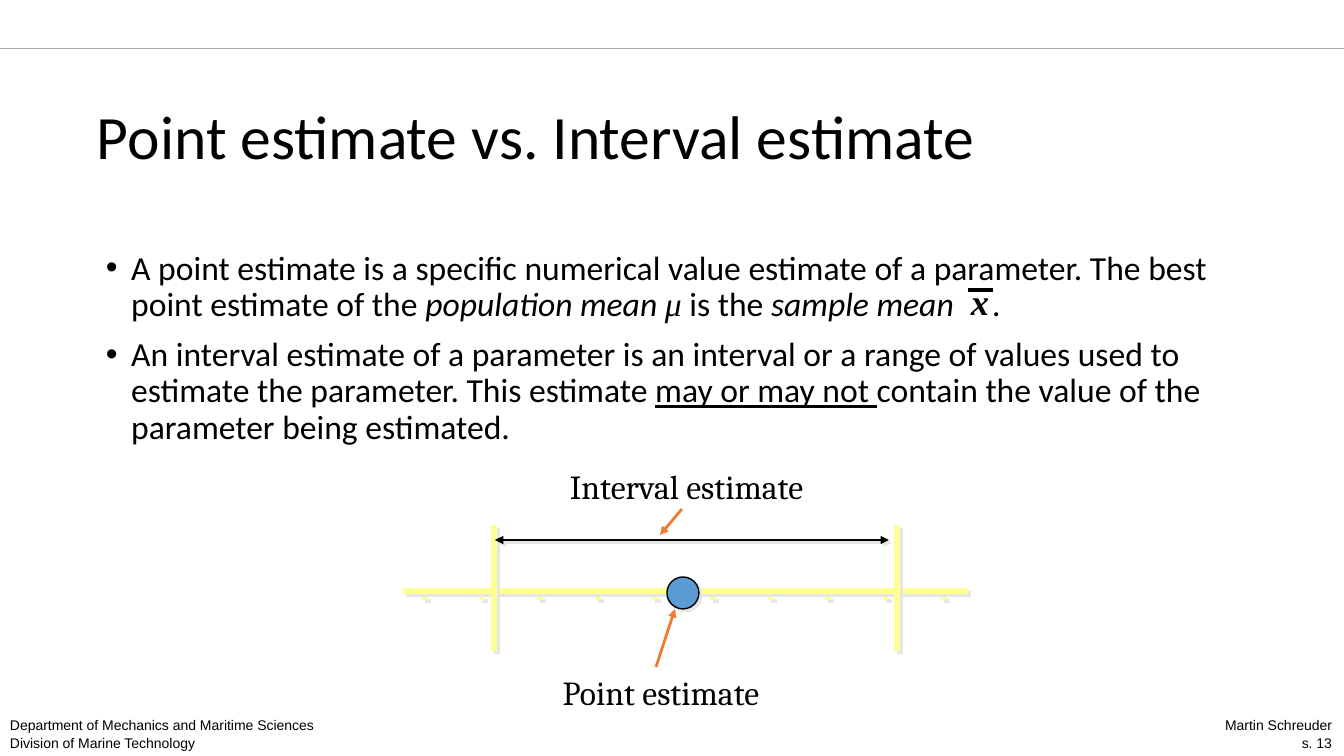
from dataclasses import dataclass
from lxml import etree
from pptx import Presentation, util as u
from pptx.dml.color import RGBColor
from pptx.enum import shapes, text
from pptx.oxml.ns import qn

SCALE = 914400 / 100.8


@dataclass(frozen=True)
class Theme:
    ink: str = "000000"
    rule: str = "AFABAB"
    axis: str = "FFFF93"
    shade: str = "E7E6E6"
    dot: str = "5B9BD5"
    arrow: str = "ED7D31"
    sans: str = "Calibri"
    serif: str = "Cambria"
    math: str = "Times New Roman"
    small: str = "Arial"
    title: int = 44
    body: int = 24
    sign: int = 26
    foot: int = 10


T = Theme()
LEFT, MID, RIGHT = text.PP_ALIGN.LEFT, text.PP_ALIGN.CENTER, text.PP_ALIGN.RIGHT


def px(n):
    return u.Emu(round(n * SCALE))


def rgb(code):
    return RGBColor.from_string(code)


def sub(node, tag, **attrs):
    return etree.SubElement(node, qn(tag), attrs)


def style(run, face, size, bold=False, italic=False, under=False):
    font = run.font
    font.name, font.size = face, u.Pt(size)
    font.bold, font.italic, font.underline = bold, italic, under
    font.color.rgb = rgb(T.ink)


def frame(slide, box, inset=(10, 5)):
    tf = slide.shapes.add_textbox(*map(px, box)).text_frame
    tf.word_wrap = True
    tf.margin_left = tf.margin_right = px(inset[0])
    tf.margin_top = tf.margin_bottom = px(inset[1])
    return tf


def write(slide, box, words, face, size, align=LEFT, inset=(10, 5), **look):
    tf = frame(slide, box, inset)
    tf.text = words
    for i, para in enumerate(tf.paragraphs):
        para.alignment = align
        if i:
            para.space_before = u.Pt(1)
        for run in para.runs:
            style(run, face, size, **look)
    return tf


def effect(shape, shade):
    fx = sub(shape._element.spPr, "a:effectLst")
    if shade:
        cast = sub(fx, "a:outerShdw", dist=str(u.Pt(2.8)), dir="2700000",
                   algn="ctr", rotWithShape="0")
        sub(cast, "a:srgbClr", val=T.shade)


def line(slide, start, end, color, width, ends=(), shade=False):
    bar = slide.shapes.add_connector(
        shapes.MSO_CONNECTOR.STRAIGHT, *map(px, (*start, *end)))
    bar.line.color.rgb = rgb(color)
    bar.line.width = u.Pt(width)
    for tag in ends:
        sub(bar.line._get_or_add_ln(), tag, type="triangle")
    effect(bar, shade)


def chrome(slide, box):
    x, y, w, h = box
    line(slide, (x, y + 48), (x + w, y + 48), T.rule, 0.25)
    top = y + h - 45
    unit = "Department of Mechanics and Maritime Sciences\nDivision of Marine Technology"
    write(slide, (x, top, 437, 45), unit, T.small, T.foot)
    write(slide, (x + w - 385, top, 383, 45), "Martin Schreuder\ns. 13",
          T.small, T.foot, RIGHT)


def title(slide, box):
    tf = write(slide, box, "Point estimate vs. Interval estimate", T.sans, T.title)
    tf.vertical_anchor = text.MSO_ANCHOR.MIDDLE
    tf.paragraphs[0].line_spacing = 0.9


def body(slide, box):
    x, y, w, h = box
    items = [
        [("A point estimate is a specific numerical value estimate of a parameter. "
          "The best point estimate of the ", {}),
         ("population mean ", {"italic": True}),
         ("μ", {"italic": True, "face": T.math}),
         (" is the ", {}),
         ("sample mean", {"italic": True}),
         (" ", {"gap": 22}),
         (".", {})],
        [("An interval estimate of a parameter is an interval or a range of values "
          "used to estimate the parameter. This estimate ", {}),
         ("may or may not ", {"under": True}),
         ("contain the value of the parameter being estimated.", {})],
    ]
    tf = frame(slide, box)
    for i, item in enumerate(items):
        para = tf.add_paragraph() if i else tf.paragraphs[0]
        props = para._p.get_or_add_pPr()
        props.set("marL", str(u.Inches(0.25)))
        props.set("indent", str(u.Inches(-0.25)))
        sub(props, "a:buFont", typeface=T.small)
        sub(props, "a:buChar", char="•")
        para.line_spacing = 0.9
        if i:
            para.space_before = u.Pt(10)
        for words, look in item:
            run = para.add_run()
            run.text = words
            look = {"face": T.sans, "size": T.body, **look}
            gap = look.pop("gap", 0)
            style(run, **look)
            if gap:
                run.font._element.set("spc", str(gap * 100))
    write(slide, (x + 875, y + 33, 25, 43), "x", T.math, T.sign,
          inset=(0, 0), bold=True, italic=True)
    line(slide, (x + 872, y + 44), (x + 897, y + 44), T.ink, 2.25)


def graph(slide, box):
    x, y, w, h = box
    axis = y + 130

    def beam(start, end):
        line(slide, start, end, T.axis, 4, shade=True)

    write(slide, (x + 148, y + 206, 220, 50), "Point estimate", T.serif, T.body, MID)
    for i in range(10):
        tick = x + 22 + i * 519 // 9
        beam((tick, axis + 5), (tick, axis + 9))
    beam((x, axis), (x + w, axis))

    dot = slide.shapes.add_shape(
        shapes.MSO_SHAPE.OVAL, *map(px, (x + 264, axis - 14, 32, 32)))
    dot.fill.solid()
    dot.fill.fore_color.rgb = rgb(T.dot)
    dot.line.color.rgb = rgb(T.ink)
    dot.line.width = u.Pt(1)
    effect(dot, True)

    tip = ["a:tailEnd"]
    line(slide, (x + 253, y + 206), (x + 272, y + 148), T.arrow, 2, tip)
    line(slide, (x + 279, y + 48), (x + 257, y + 74), T.arrow, 2, tip)

    write(slide, (x + 157, y, 270, 50), "Interval estimate", T.serif, T.body)
    for edge in (x + 91, x + 494):
        beam((edge, y + 64), (edge, y + 190))
    line(slide, (x + 92, y + 79), (x + 486, y + 79), T.ink, 2,
         ["a:headEnd", "a:tailEnd"], True)


def main():
    deck = Presentation()
    deck.slide_width, deck.slide_height = px(1344), px(756)
    slide = deck.slides.add_slide(deck.slide_layouts[6])
    chrome(slide, (0, 0, 1344, 756))
    title(slide, (87, 67, 1159, 146))
    body(slide, (96, 246, 1159, 480))
    graph(slide, (403, 461, 565, 256))
    deck.save("out.pptx")


if __name__ == "__main__":
    main()
